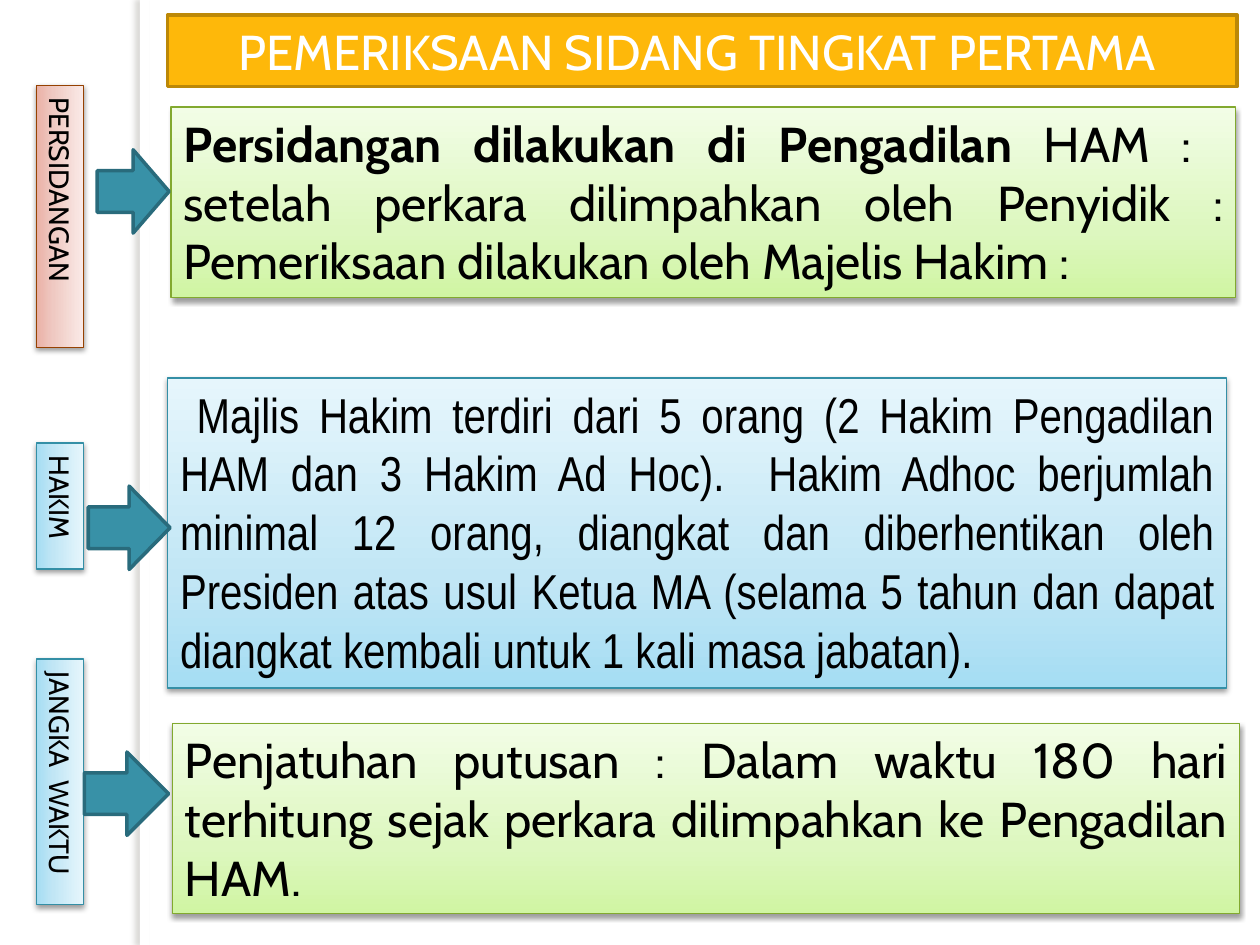
from copy import deepcopy

from lxml import etree
from pptx import Presentation
from pptx.dml.color import RGBColor
from pptx.enum.shapes import MSO_SHAPE as Shape
from pptx.enum.text import MSO_ANCHOR as Anchor, MSO_AUTO_SIZE as AutoSize, PP_ALIGN as Align
from pptx.oxml.ns import qn
from pptx.util import Cm, Pt

# Gradient stops from bottom to top, then the outline
RED = (("EAB1A6", "EFC9C2", "FAEAE7"), "964101")
BLUE = (("A5DDF3", "C1E6F5", "E6F6FC"), "348FA6")
GREEN = (("D0F5A3", "DDF7BF", "F2FDE6"), "82A92F")


def color(hex_text):
    return RGBColor.from_string(hex_text)


class SlideBuilder:
    font = "Cabin"
    body_size = 28
    label_size = 16
    label_center, label_height = 1.21, 0.94
    stop_positions = (0, 0.35, 1)

    def __init__(self, slide):
        self.slide = slide

    def solid(self, kind, left, top, width, height, fill, line=None):
        shape = self.slide.shapes.add_shape(kind, Cm(left), Cm(top), Cm(width), Cm(height))
        shape.shadow.inherit = False
        shape.fill.solid()
        shape.fill.fore_color.rgb = color(fill)
        if line:
            shape.line.color.rgb = color(line)
            shape.line.width = Pt(2)
        else:
            shape.line.fill.background()
        return shape

    def shadow(self, shape, hex_text, opacity, blur, distance, angle):
        effects = shape.element.spPr.find(qn("a:effectLst"))
        outer = etree.SubElement(
            effects, qn("a:outerShdw"), blurRad=str(Pt(blur)), dist=str(Pt(distance)),
            dir=str(angle * 60000), rotWithShape="0")
        tint = etree.SubElement(outer, qn("a:srgbClr"), val=hex_text)
        etree.SubElement(tint, qn("a:alpha"), val=str(opacity * 1000))

    def panel(self, left, top, width, height, theme):
        stops, line = theme
        shape = self.solid(Shape.RECTANGLE, left, top, width, height, stops[0], line)
        shape.line.width = Pt(0.75)
        shape.fill.gradient()
        shape.fill.gradient_angle = 90
        first_stop = next(shape.element.spPr.iter(qn("a:gs")))
        first_stop.addnext(deepcopy(first_stop))
        for stop, position, hex_text in zip(
                shape.fill.gradient_stops, self.stop_positions, stops):
            stop.position = position
            stop.color.rgb = color(hex_text)
        self.shadow(shape, "000000", 38, 3.1, 1.6, 90)
        return shape

    def add_text(self, shape, runs, align=Align.JUSTIFY, hex_text="000000"):
        """Each run is (text, size, font, bold)."""
        frame = shape.text_frame
        frame.word_wrap = True
        frame.auto_size = AutoSize.SHAPE_TO_FIT_TEXT
        frame.vertical_anchor = Anchor.TOP
        paragraph = frame.paragraphs[0]
        paragraph.alignment = align
        for text, size, font, bold in runs:
            run = paragraph.add_run()
            run.text = text
            run.font.size = Pt(size)
            run.font.name = font
            run.font.bold = bold
            run.font.color.rgb = color(hex_text)
        return paragraph

    def edge(self):
        shape = self.solid(Shape.RECTANGLE, 2.82, 0, 0.2, 19.05, "FFFFFF")
        self.shadow(shape, "736F63", 25, 3, 3, 180)

    def title(self, text):
        shape = self.solid(Shape.RECTANGLE, 3.38, 0.3, 21.56, 1.45, "FEB80A", "BC8807")
        self.add_text(shape, [(text, self.body_size, self.font, False)], Align.CENTER, "FFFFFF")

    def label(self, text, middle, length, theme):
        shape = self.panel(self.label_center - length / 2, middle - self.label_height / 2,
                           length, self.label_height, theme)
        shape.rotation = 90
        paragraph = self.add_text(shape, [(text, self.label_size, self.font, False)])
        paragraph.space_before = Pt(0.2 * self.label_size)

    def box(self, left, top, width, height, theme, runs):
        self.add_text(self.panel(left, top, width, height, theme), runs)

    def arrow(self, left, top, width):
        self.solid(Shape.RIGHT_ARROW, left, top, width, 1.68, "3891A7", "296B7C")


def main():
    presentation = Presentation()
    presentation.slide_width, presentation.slide_height = Cm(25.4), Cm(19.05)
    builder = SlideBuilder(presentation.slides.add_slide(presentation.slide_layouts[6]))
    size, font = builder.body_size, builder.font

    # Side edge and title
    builder.edge()
    builder.title("PEMERIKSAAN SIDANG TINGKAT PERTAMA ")

    # Vertical labels
    builder.label("PERSIDANGAN", 4.36, 5.28, RED)
    builder.label("HAKIM ", 10.2, 2.54, BLUE)
    builder.label("JANGKA  WAKTU", 15.76, 4.95, BLUE)

    # Explanations
    builder.box(3.45, 2.16, 21.46, 3.84, GREEN, [
        ("Persidangan dilakukan di Pengadilan ", size, font, True),
        ("HAM :  setelah perkara dilimpahkan oleh Penyidik : "
         "Pemeriksaan dilakukan oleh Majelis Hakim :", size, font, False)])
    builder.box(3.38, 7.62, 21.34, 6.25, BLUE, [
        (" ", 20, font, False),
        ("Majlis Hakim terdiri dari 5 orang (2 Hakim Pengadilan HAM dan 3 Hakim Ad Hoc).  "
         "Hakim Adhoc berjumlah minimal 12 orang, diangkat dan diberhentikan oleh Presiden "
         "atas usul Ketua MA (selama 5 tahun dan dapat diangkat kembali untuk 1 kali masa "
         "jabatan).", size, "Arial Narrow", False)])
    builder.box(3.48, 14.58, 21.51, 3.84, GREEN, [
        ("Penjatuhan putusan : Dalam waktu 180 hari terhitung sejak perkara dilimpahkan "
         "ke Pengadilan HAM. ", size, font, False)])

    # Arrows from label to explanation
    for left, top, width in ((1.96, 3.02, 1.45), (1.78, 9.8, 1.65), (1.7, 15.16, 1.7)):
        builder.arrow(left, top, width)

    presentation.save("out.pptx")


if __name__ == "__main__":
    main()
